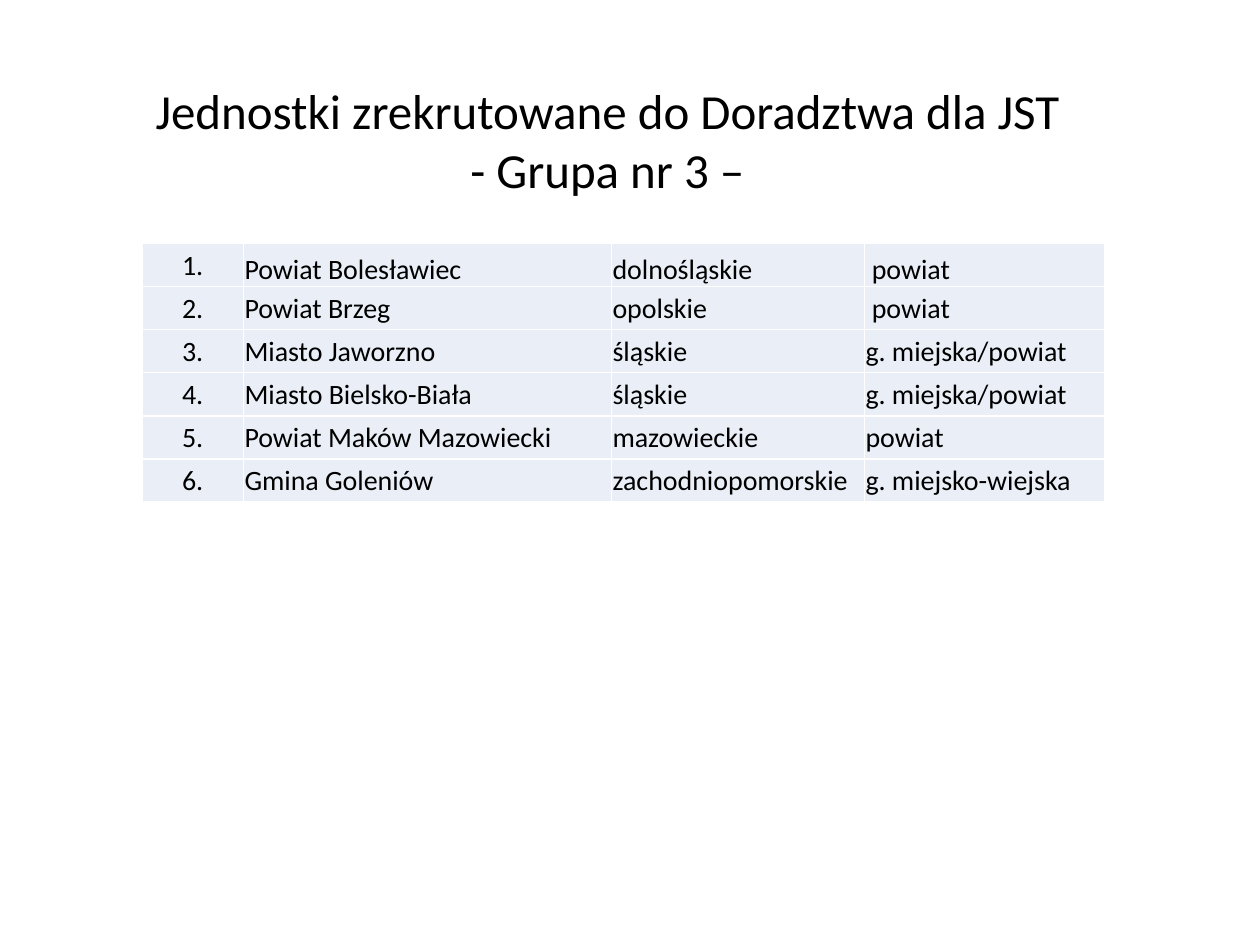
from dataclasses import dataclass

from lxml import etree
from pptx import Presentation
from pptx.dml.color import RGBColor
from pptx.enum import text
from pptx.oxml import ns
from pptx.util import Cm, Pt


@dataclass(frozen=True)
class Theme:
    font: str = "Calibri"
    ink: str = "000000"
    cell: str = "EAEFF7"
    rule: str = "FFFFFF"
    head: int = 28
    body: int = 16


THEME = Theme()
TITLE = "Jednostki zrekrutowane do Doradztwa dla JST \v- Grupa nr 3 – "
UNITS = [
    ("Powiat Bolesławiec", "dolnośląskie", " powiat"),
    ("Powiat Brzeg", "opolskie", " powiat"),
    ("Miasto Jaworzno", "śląskie", "g. miejska/powiat"),
    ("Miasto Bielsko-Biała", "śląskie", "g. miejska/powiat"),
    ("Powiat Maków Mazowiecki", "mazowieckie", "powiat"),
    ("Gmina Goleniów", "zachodniopomorskie", "g. miejsko-wiejska"),
]
WIDTHS = (2.05, 7.42, 5.1, 4.84)  # cm


def write(frame, words, size, align):
    frame.text = words
    para = frame.paragraphs[0]
    para.alignment = align
    for run in para.runs:
        run.font.name = THEME.font
        run.font.size = Pt(size)
        run.font.color.rgb = RGBColor.from_string(THEME.ink)


def add_rules(cell):
    props = cell._tc.get_or_add_tcPr()
    for side in ("a:lnL", "a:lnR", "a:lnT", "a:lnB"):
        line = etree.SubElement(props, ns.qn(side), w=str(Pt(1)))
        fill = etree.SubElement(line, ns.qn("a:solidFill"))
        etree.SubElement(fill, ns.qn("a:srgbClr"), val=THEME.rule)


def add_title(slide, left, top, width, height):
    frame = slide.shapes.add_textbox(Cm(left), Cm(top), Cm(width), Cm(height)).text_frame
    frame.word_wrap = True
    frame.auto_size = text.MSO_AUTO_SIZE.SHAPE_TO_FIT_TEXT
    write(frame, TITLE, THEME.head, text.PP_ALIGN.CENTER)


def fill_cell(cell, words, align, anchor):
    cell.margin_left = cell.margin_right = cell.margin_top = Cm(0.02)
    cell.margin_bottom = 0
    cell.vertical_anchor = anchor
    add_rules(cell)
    cell.fill.solid()
    cell.fill.fore_color.rgb = RGBColor.from_string(THEME.cell)
    write(cell.text_frame, words, THEME.body, align)


def add_units(slide, left, top, width, height):
    frame = slide.shapes.add_table(
        len(UNITS), len(WIDTHS), Cm(left), Cm(top), Cm(width), Cm(height))
    table = frame.table
    table.first_row = table.horz_banding = False
    for col, size in zip(table.columns, WIDTHS):
        col.width = Cm(size)
    for r, unit in enumerate(UNITS):
        table.rows[r].height = Cm(height / len(UNITS))
        for c, words in enumerate((f"{r + 1}.", *unit)):
            align = text.PP_ALIGN.LEFT if c else text.PP_ALIGN.CENTER
            # Names in the first row sit at the bottom
            low = r == 0 and c > 0
            anchor = text.MSO_ANCHOR.BOTTOM if low else text.MSO_ANCHOR.MIDDLE
            fill_cell(table.cell(r, c), words, align, anchor)


def main():
    deck = Presentation()
    deck.slide_width, deck.slide_height = Cm(25.4), Cm(19.05)
    slide = deck.slides.add_slide(deck.slide_layouts[6])
    # Heading
    add_title(slide, 2.69, 1.5, 19.33, 2.64)
    # Table of units
    add_units(slide, 2.86, 4.91, sum(WIDTHS), 5.21)
    deck.save("out.pptx")


if __name__ == "__main__":
    main()
